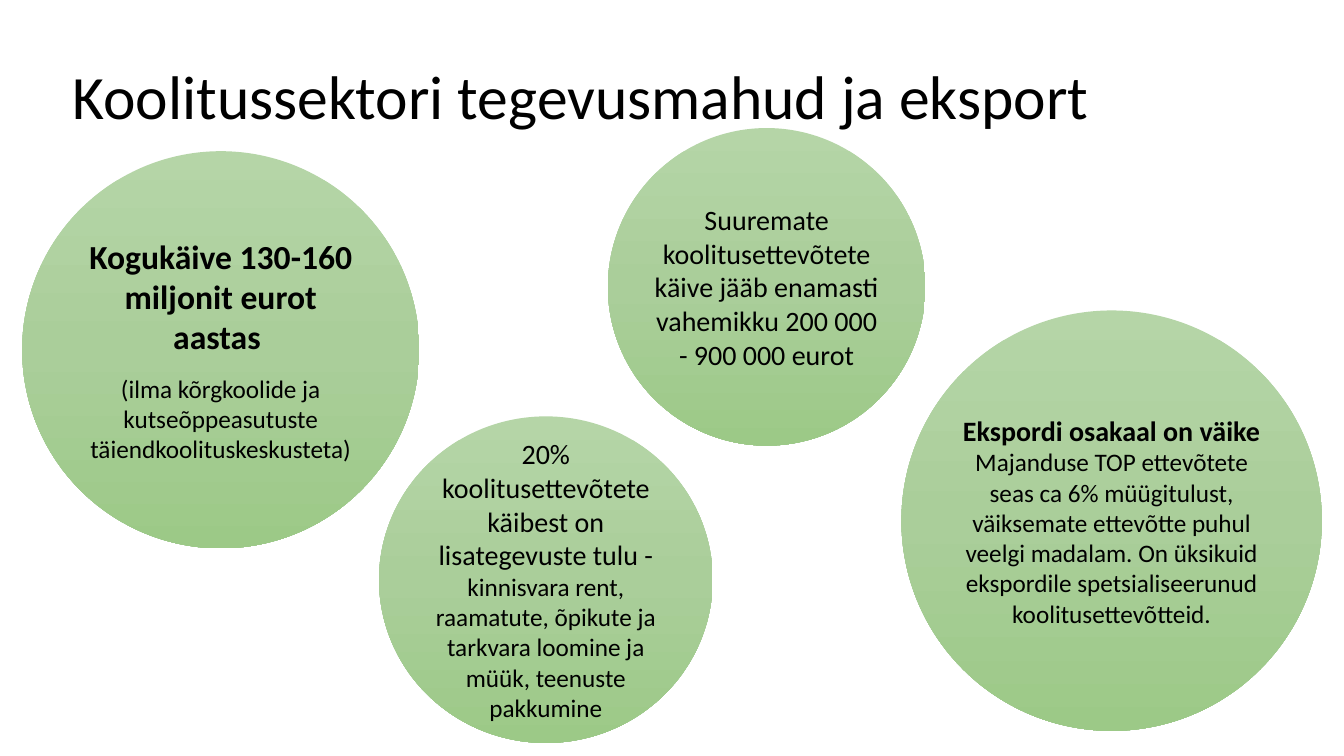
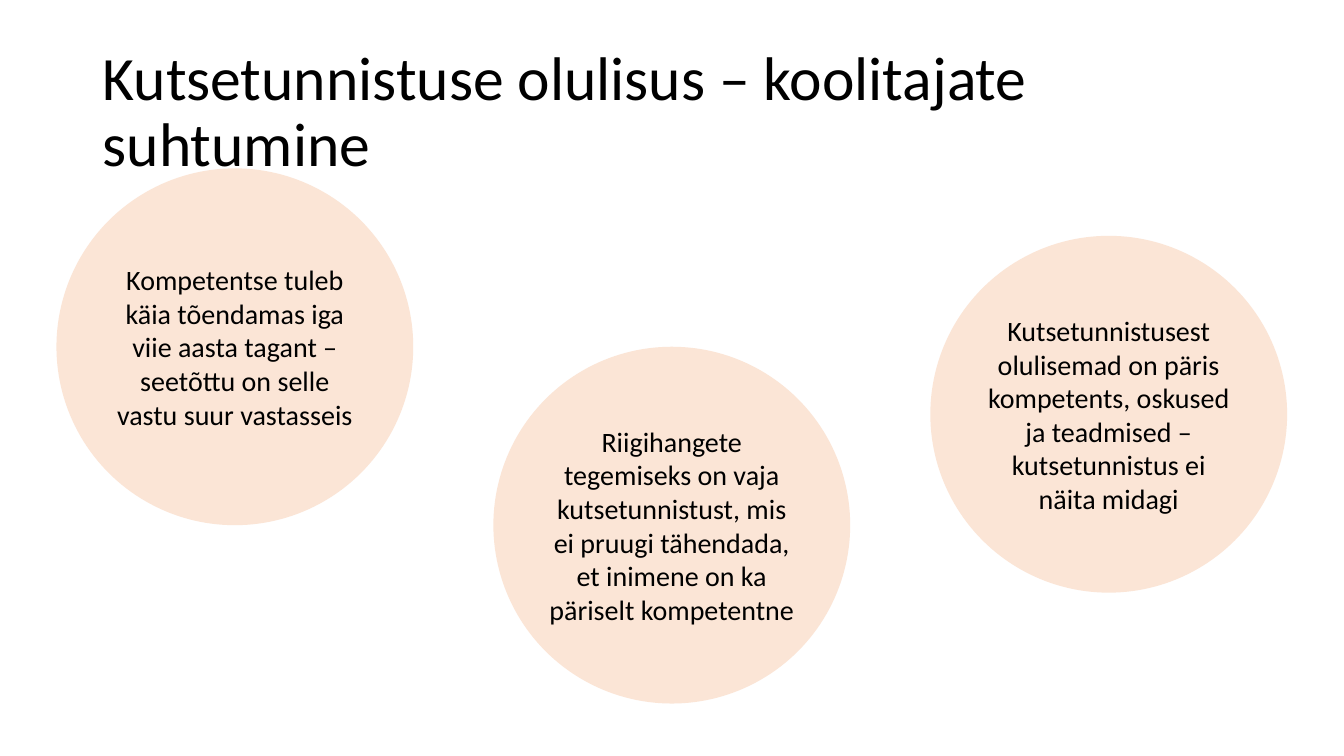
from copy import deepcopy
from pptx import Presentation
from pptx.dml.color import RGBColor
from pptx.enum.shapes import MSO_SHAPE as Geo
from pptx.enum.text import MSO_ANCHOR as Anchor, PP_ALIGN as Align
from pptx.oxml.ns import qn
from pptx.util import Inches, Pt

WIDE, HIGH = Inches(13.333), Inches(7.5)
CELL = WIDE / 100  # square grid, 100 columns across

# Shared style
FONT, INK = "Calibri", "000000"
GREEN = ["B5D5A7", "AACE9A", "9CC987"]  # top to bottom
PEACH = ["FBE5D6"]
HEAD = dict(size=Pt(44), bold=False)
BIG = dict(size=Pt(24), bold=True)
LEAD = dict(size=Pt(20), bold=True)
BODY = dict(size=Pt(20), bold=False)
NOTE = dict(size=Pt(18), bold=False)

# Row of equal circles: first column, column step, size
LEFT, STEP, SIZE = 4.2, 32.51, 26.55
VIEWS = [
    (12.53, "Kompetentse tuleb käia tõendamas iga viie aasta tagant – "
            "seetõttu on selle vastu suur vastasseis"),
    (25.8, "Riigihangete tegemiseks on vaja kutsetunnistust, mis ei pruugi "
           "tähendada, et inimene on ka päriselt kompetentne"),
    (17.55, "Kutsetunnistusest olulisemad on päris kompetents, oskused ja "
            "teadmised – kutsetunnistus ei näita midagi"),
]

# Circles: grid box, space after, paragraphs made of (text, style) runs
FACTS = [
    ((1.65, 11.25, 29.55, 29.55), 12, [
        [("Kogukäive 130-160 miljonit eurot aastas ", BIG)],
        [("(ilma kõrgkoolide ja kutseõppeasutuste "
          "täiendkoolituskeskusteta)", NOTE)]]),
    ((28.2, 30.98, 24.83, 24.3), 0, [
        [("20% koolitusettevõtete käibest on lisategevuste tulu -", BODY),
         (" kinnisvara rent, raamatute, õpikute ja tarkvara loomine ja müük, "
          "teenuste pakkumine", NOTE)]]),
    ((45.23, 9.53, 23.63, 23.63), 0, [
        [("Suuremate koolitusettevõtete käive jääb enamasti vahemikku "
          "200 000 - 900 000 eurot", BODY)]]),
    ((67.07, 23.1, 31.28, 31.28), 0, [
        [("Ekspordi osakaal on väike ", LEAD)],
        [("Majanduse TOP ettevõtete seas ca 6% müügitulust, väiksemate "
          "ettevõtte puhul veelgi madalam. On üksikuid ekspordile "
          "spetsialiseerunud koolitusettevõtteid.", NOTE)]]),
]

SLIDES = [
    ("Koolitussektori tegevusmahud ja eksport",
     (4.65, 3, 88.5, 8.78), GREEN, FACTS),
    ("Kutsetunnistuse olulisus – koolitajate suhtumine",
     (6.9, 3, 90.83, 10.88), PEACH,
     [((LEFT + i * STEP, top, SIZE, SIZE), 0, [[(text, BODY)]])
      for i, (top, text) in enumerate(VIEWS)]),
]


def tint(code):
    return RGBColor.from_string(code)


def place(box):
    return [round(n * CELL) for n in box]


def write(frame, paras, inset=None, **form):
    frame.word_wrap = True
    frame.vertical_anchor = Anchor.MIDDLE
    if inset is not None:
        for side in ("left", "top", "right", "bottom"):
            setattr(frame, "margin_" + side, inset)
    for i, runs in enumerate(paras):
        para = frame.add_paragraph() if i else frame.paragraphs[0]
        for key, val in form.items():
            setattr(para, key, val)
        for text, style in runs:
            run = para.add_run()
            run.text = text
            run.font.name = FONT
            run.font.color.rgb = tint(INK)
            for key, val in style.items():
                setattr(run.font, key, val)


def paint(shape, tones):
    fill = shape.fill
    if len(tones) == 1:
        fill.solid()
        fill.fore_color.rgb = tint(tones[0])
        return
    fill.gradient()
    fill.gradient_angle = 270
    # A new gradient has two stops: add the rest
    stops = shape.element.spPr.find(qn("a:gradFill")).find(qn("a:gsLst"))
    for _ in tones[2:]:
        stops.append(deepcopy(stops[0]))
    for i, (stop, tone) in enumerate(zip(fill.gradient_stops, tones)):
        stop.position = i / (len(tones) - 1)
        stop.color.rgb = tint(tone)


def circle(slide, box, after, paras, tones):
    shape = slide.shapes.add_shape(Geo.OVAL, *place(box))
    shape.shadow.inherit = False
    shape.line.fill.background()
    paint(shape, tones)
    write(shape.text_frame, paras, inset=0,
          alignment=Align.CENTER, space_after=Pt(after))


def main():
    deck = Presentation()
    deck.slide_width, deck.slide_height = WIDE, HIGH
    for title, box, tones, parts in SLIDES:
        slide = deck.slides.add_slide(deck.slide_layouts[6])
        head = slide.shapes.add_textbox(*place(box))
        write(head.text_frame, [[(title, HEAD)]], line_spacing=0.9)
        for part in parts:
            circle(slide, *part, tones)
    deck.save("out.pptx")


if __name__ == "__main__":
    main()
